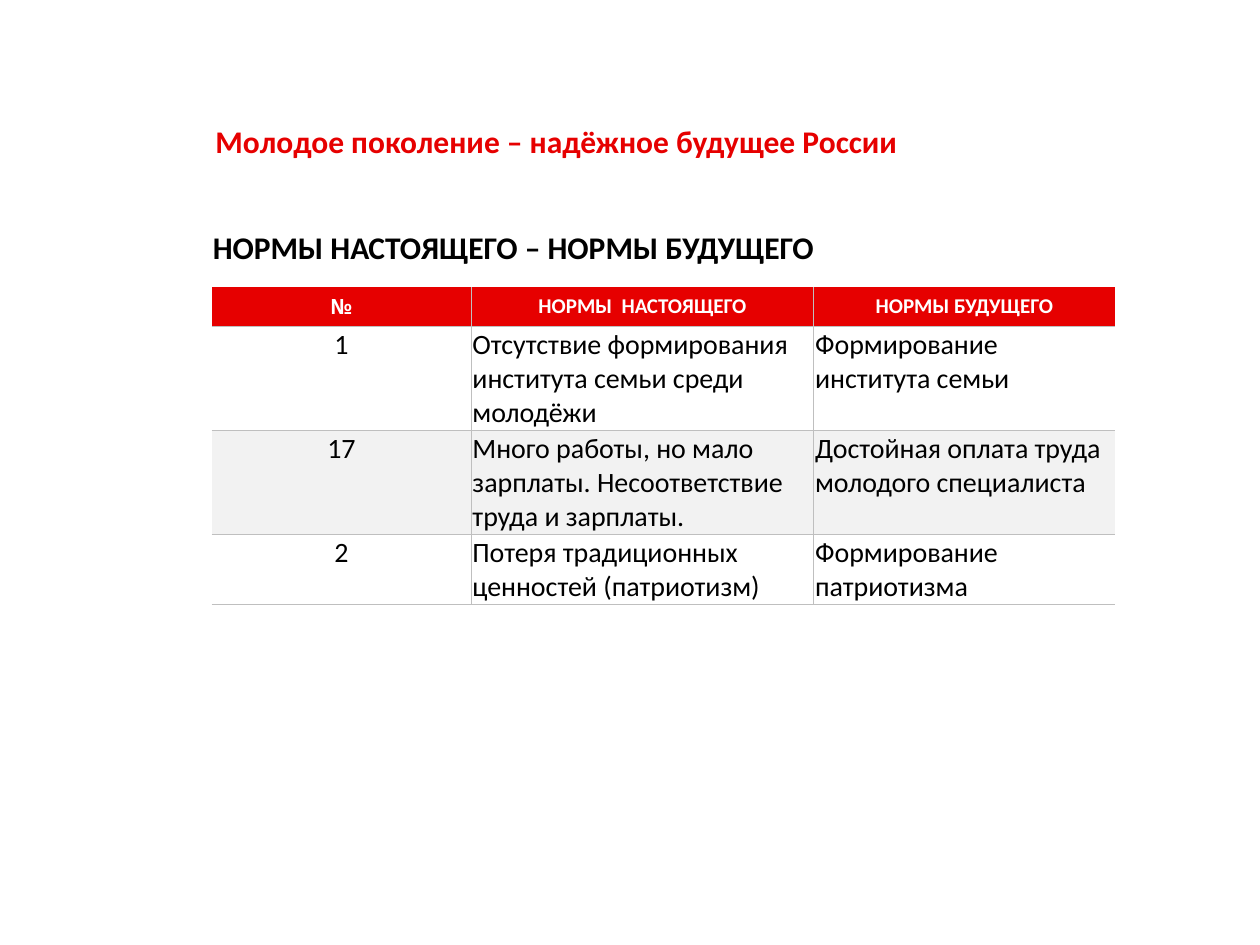
from lxml.etree import SubElement
from pptx import Presentation
from pptx.dml.color import RGBColor as RGB
from pptx.enum.text import MSO_ANCHOR as Anchor, MSO_AUTO_SIZE as Fit, PP_ALIGN as Align
from pptx.oxml.ns import qn
from pptx.util import Inches, Pt

# Content
TITLE = "Молодое поколение – надёжное будущее России"
HEAD = "НОРМЫ НАСТОЯЩЕГО – НОРМЫ БУДУЩЕГО"
ROWS = [
    ("№", "НОРМЫ  НАСТОЯЩЕГО", "НОРМЫ БУДУЩЕГО"),
    ("1", "Отсутствие формирования института семьи среди молодёжи",
     "Формирование института семьи"),
    ("17", "Много работы, но мало зарплаты. Несоответствие труда и зарплаты.",
     "Достойная оплата труда молодого специалиста"),
    ("2", "Потеря традиционных ценностей (патриотизм)",
     "Формирование патриотизма"),
]
WIDTHS = (2.06, 2.72, 2.39)
HEIGHTS = (0.31, 0.82, 0.82, 0.55)

# Theme
THEME = {
    "red": "E60000", "black": "000000", "white": "FFFFFF",
    "band": "F2F2F2", "rule": "BFBFBF", "line": 0.5,
    "font": "Calibri", "mark": "Cabin",
    "big": 18, "body": 16, "small": 12,
}


def write(frame, text, size="body", color="black", font="font", bold=False,
          align=Align.LEFT):
    para = frame.paragraphs[0]
    para.alignment = align
    run = para.add_run()
    run.text = text
    run.font.name = THEME[font]
    run.font.size = Pt(THEME[size])
    run.font.bold = bold
    run.font.color.rgb = RGB.from_string(THEME[color])


def border(cell, sides):
    props = cell._tc.get_or_add_tcPr()
    for side in "LRTB":
        line = SubElement(props, qn(f"a:ln{side}"), w=str(Pt(THEME["line"])))
        if side in sides:
            fill = SubElement(line, qn("a:solidFill"))
            SubElement(fill, qn("a:srgbClr"), val=THEME["rule"])
        else:
            SubElement(line, qn("a:noFill"))


def pad(cell, left, top, right, bottom):
    cell.margin_left, cell.margin_top = Inches(left), Inches(top)
    cell.margin_right, cell.margin_bottom = Inches(right), Inches(bottom)


deck = Presentation()
deck.slide_width, deck.slide_height = Inches(10), Inches(7.5)
slide = deck.slides.add_slide(deck.slide_layouts[5])

# Title
title = slide.shapes.title
title.left, title.top = Inches(1.61), Inches(0.92)
title.width, title.height = Inches(7.15), Inches(0.39)
title.text_frame.auto_size = Fit.NONE
title.text_frame.vertical_anchor = Anchor.MIDDLE
write(title.text_frame, TITLE, size="big", color="red", bold=True)

# Table
table = slide.shapes.add_table(
    len(ROWS), len(WIDTHS), Inches(1.68), Inches(2.28),
    Inches(sum(WIDTHS)), Inches(sum(HEIGHTS))).table
table.horz_banding = False
for col, width in zip(table.columns, WIDTHS):
    col.width = Inches(width)
for row, height in zip(table.rows, HEIGHTS):
    row.height = Inches(height)

last = len(WIDTHS) - 1
for r, row in enumerate(ROWS):
    for c, text in enumerate(row):
        cell = table.cell(r, c)
        # Rules run between columns and under every row
        border(cell, "B" + "L" * (c > 0) + "R" * (c < last) + "T" * (r > 0))
        tint = "red" if r == 0 else "band" if r == 2 else None
        if tint:
            cell.fill.solid()
            cell.fill.fore_color.rgb = RGB.from_string(THEME[tint])
        else:
            cell.fill.background()
        if r == 0:
            pad(cell, 0.07, 0.04, 0.07, 0.04)
            cell.vertical_anchor = Anchor.MIDDLE
            write(cell.text_frame, text, size="small", color="white", bold=True,
                  font="font" if c else "mark", align=Align.CENTER)
        else:
            pad(cell, 0.01, 0.01, 0.01, 0)
            cell.vertical_anchor = Anchor.TOP
            write(cell.text_frame, text,
                  align=Align.LEFT if c else Align.CENTER)

# Table heading
box = slide.shapes.add_textbox(Inches(1.59), Inches(1.76), Inches(5.02), Inches(0.4))
box.text_frame.word_wrap = False
box.text_frame.auto_size = Fit.SHAPE_TO_FIT_TEXT
write(box.text_frame, HEAD, size="big", bold=True)

deck.save("out.pptx")
